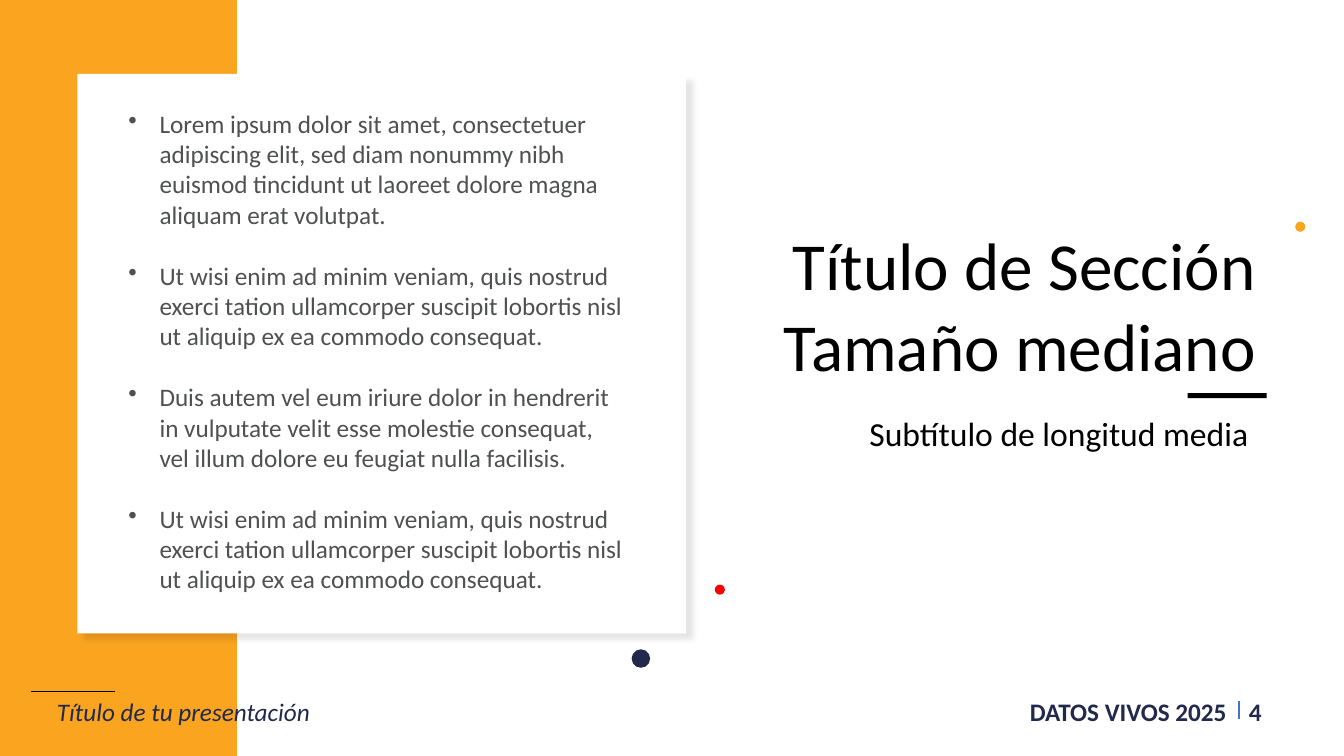
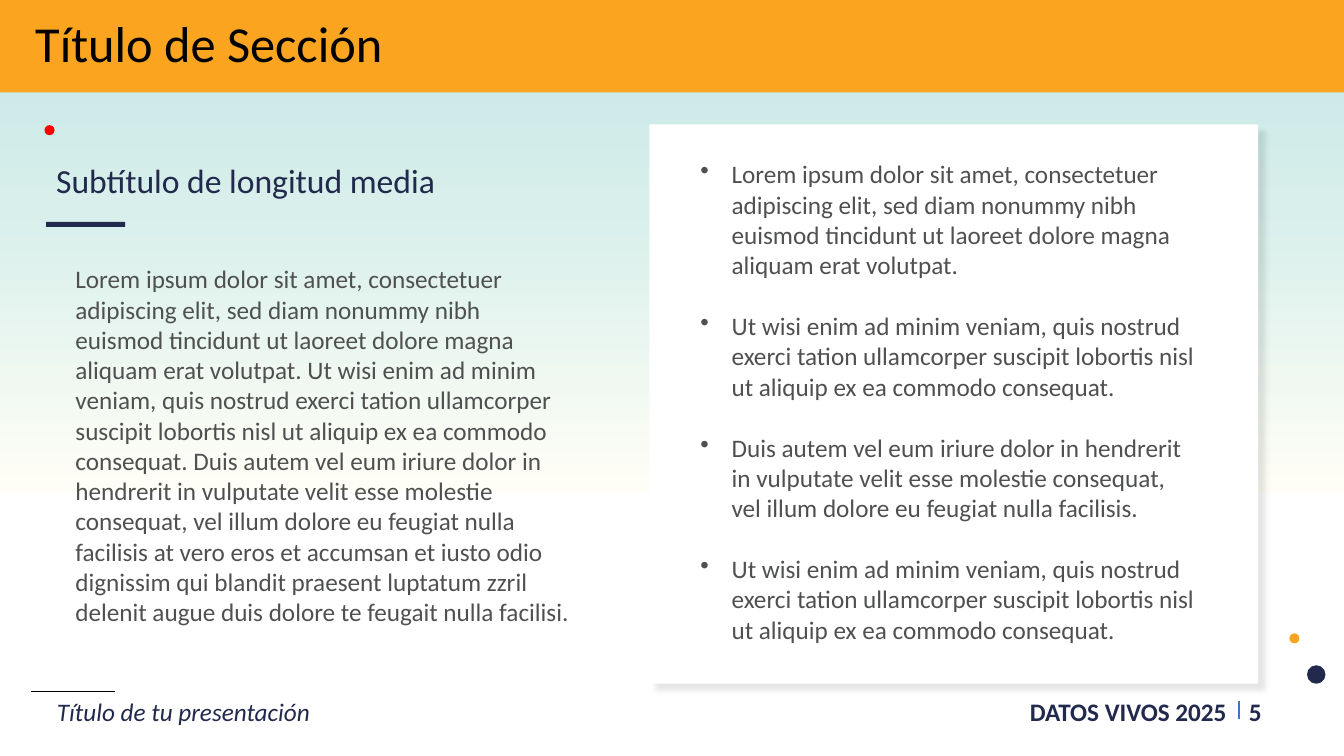
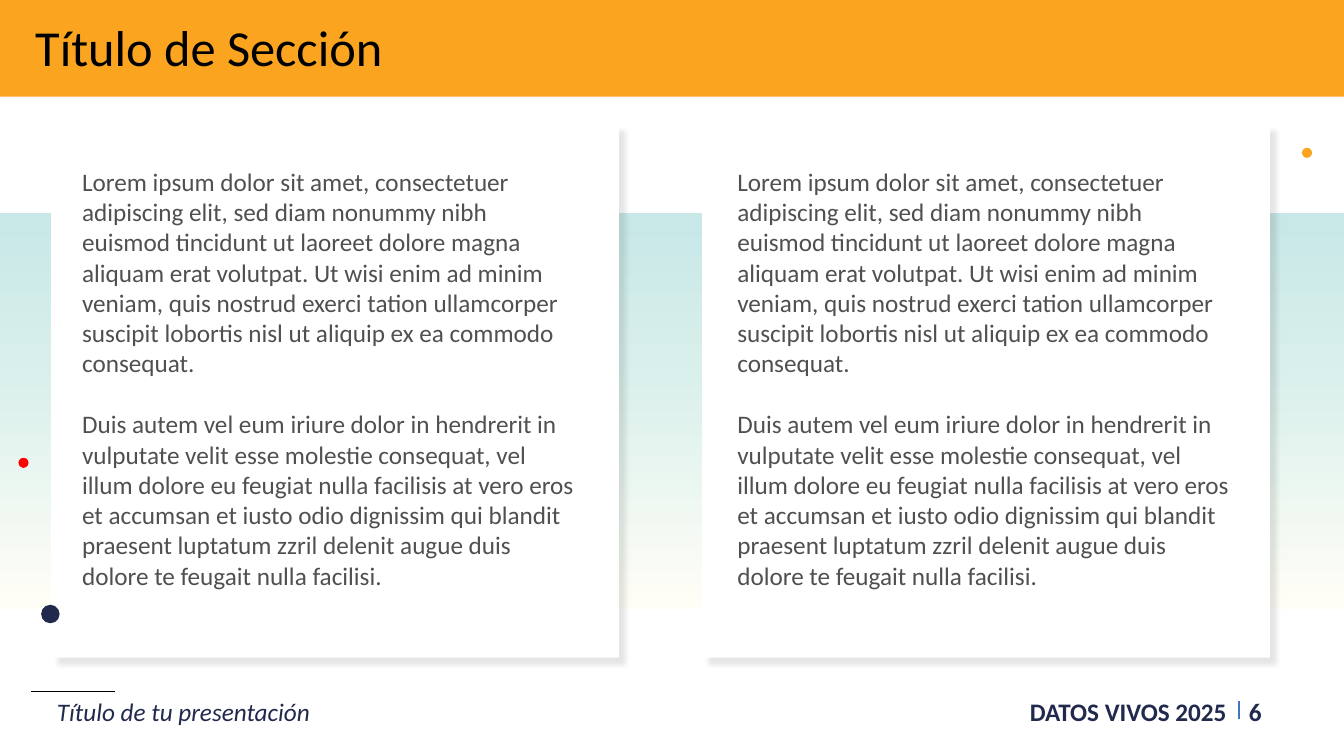
from lxml import etree
from pptx import Presentation
from pptx import util as u
from pptx.dml.color import RGBColor
from pptx.enum import shapes, text
from pptx.oxml import parse_xml
from pptx.oxml.ns import nsdecls, qn

# Shared palette
ORANGE = RGBColor(0xFA, 0xA4, 0x1F)
NAVY = RGBColor(0x21, 0x29, 0x4D)
RED = RGBColor(0xFF, 0x00, 0x00)
BLACK = RGBColor(0x00, 0x00, 0x00)
WHITE = RGBColor(0xFF, 0xFF, 0xFF)
GRAY = RGBColor(0x4F, 0x50, 0x50)
BLUE = RGBColor(0x44, 0x72, 0xC4)
SKY_STOPS = ((0, RGBColor(0xFF, 0xFE, 0xF6)),
             (62, RGBColor(0xD8, 0xEF, 0xEB)),
             (98, RGBColor(0xC8, 0xE8, 0xE7)))

# Wording used on several slides
SECTION = "Título de Sección"
SUBTITLE = "Subtítulo de longitud media"
LOREM = ("Lorem ipsum dolor sit amet, consectetuer adipiscing elit, sed diam nonummy "
         "nibh euismod tincidunt ut laoreet dolore magna aliquam erat volutpat.")
WISI = ("Ut wisi enim ad minim veniam, quis nostrud exerci tation ullamcorper "
        "suscipit lobortis nisl ut aliquip ex ea commodo consequat.")
DUIS = ("Duis autem vel eum iriure dolor in hendrerit in vulputate velit esse "
        "molestie consequat, vel illum dolore eu feugiat nulla facilisis")
VERO = (" at vero eros et accumsan et iusto odio dignissim qui blandit praesent "
        "luptatum zzril delenit augue duis dolore te feugait nulla facilisi.")
POINTS = (LOREM, WISI, DUIS + ".", WISI)

COLUMNS, ROWS = 16, 9
TEXT_WIDTH = 6.17


class Deck:
    """Style and current slide; all lengths are grid columns and rows."""

    font = "Calibri"
    body_size = 18
    paragraph_gap = 22

    def __init__(self):
        self.deck = Presentation()
        self.deck.slide_width = u.Inches(13.333)
        self.deck.slide_height = u.Inches(7.5)
        self.cell_width = self.deck.slide_width / COLUMNS
        self.cell_height = self.deck.slide_height / ROWS
        self.page = None

    def place(self, column, row, width, height):
        return (round(column * self.cell_width), round(row * self.cell_height),
                round(width * self.cell_width), round(height * self.cell_height))

    # Pages and their footer
    def add_page(self, number):
        self.page = self.deck.slides.add_slide(self.deck.slide_layouts[6])
        self.number = number

    def footer(self):
        self.text(14.75, 8.23, 0.82, 0.48, [str(self.number)], color=NAVY, bold=True)
        self.line(14.75, 8.35, 14.75, 8.56, BLUE)
        self.text(11.92, 8.23, 2.8, 0.48, ["DATOS VIVOS 2025"], color=NAVY,
                  bold=True, right=True)
        self.line(0.37, 8.23, 1.37, 8.23, BLACK)
        self.text(0.56, 8.23, 8.05, 0.48, ["Título de tu presentación"],
                  color=NAVY, italic=True)

    # Shapes
    def shape(self, column, row, width, height, color,
              kind=shapes.MSO_SHAPE.RECTANGLE):
        box = self.page.shapes.add_shape(kind, *self.place(column, row, width, height))
        box.shadow.inherit = False
        box.fill.solid()
        box.fill.fore_color.rgb = color
        box.line.fill.background()
        return box

    def dot(self, column, row, color, size=0.12):
        self.shape(column, row, size, size, color, shapes.MSO_SHAPE.OVAL)

    def rule(self, column, row, color):
        self.shape(column, row, 0.94, 0.06, color)

    def line(self, column, row, end_column, end_row, color):
        start = self.place(column, row, 0, 0)[:2]
        end = self.place(end_column, end_row, 0, 0)[:2]
        line = self.page.shapes.add_connector(shapes.MSO_CONNECTOR.STRAIGHT, *start, *end)
        line.line.color.rgb = color
        line.line.width = u.Pt(1)
        etree.SubElement(line._element.spPr, qn("a:effectLst"))

    def sky(self, row, height):
        box = self.shape(0, row, COLUMNS, height, WHITE)
        stops = "".join(f'<a:gs pos="{share * 1000}"><a:srgbClr val="{color}"/></a:gs>'
                        for share, color in SKY_STOPS)
        gradient = parse_xml(f'<a:gradFill {nsdecls("a")}><a:gsLst>{stops}</a:gsLst>'
                             '<a:lin ang="16200000" scaled="0"/></a:gradFill>')
        properties = box._element.spPr
        properties.replace(properties.find(qn("a:solidFill")), gradient)

    def card(self, column, row, width, height):
        box = self.shape(column, row, width, height, WHITE)
        effects = box._element.spPr.find(qn("a:effectLst"))
        effects.append(parse_xml(
            f'<a:outerShdw {nsdecls("a")} blurRad="{u.Pt(4)}" dist="{u.Pt(7)}" '
            'dir="2700000" algn="tl" rotWithShape="0"><a:srgbClr val="000000">'
            '<a:alpha val="9000"/></a:srgbClr></a:outerShdw>'))

    # Text
    def fill_text(self, frame, lines, color, size, bold=False, italic=False,
                  right=False, gap=0, bullets=False):
        frame.word_wrap = True
        for index, line in enumerate(lines):
            para = frame.paragraphs[0] if index == 0 else frame.add_paragraph()
            para.text = line
            para.alignment = text.PP_ALIGN.RIGHT if right else text.PP_ALIGN.LEFT
            para.space_before = u.Pt(gap if index else 0)
            para.font.name, para.font.size = self.font, u.Pt(size)
            para.font.bold, para.font.italic = bold, italic
            para.font.color.rgb = color
            if bullets:
                self.bullet(para)

    def bullet(self, para):
        properties = para._p.get_or_add_pPr()
        indent = u.Inches(0.31)
        properties.set("marL", str(indent))
        properties.set("indent", str(-indent))
        mark = parse_xml(f'<a:buChar {nsdecls("a")} char="•"/>')
        properties.find(qn("a:defRPr")).addprevious(mark)

    def text(self, column, row, width, height, lines, color=GRAY, size=body_size, **style):
        box = self.page.shapes.add_textbox(*self.place(column, row, width, height))
        self.fill_text(box.text_frame, lines, color, size, **style)

    def title_band(self, row=0):
        band = self.shape(0, row, COLUMNS, 1.15, ORANGE)
        frame = band.text_frame
        frame.margin_left, frame.margin_right = u.Inches(0.35), u.Inches(0.16)
        frame.margin_top, frame.margin_bottom = u.Inches(0.12), u.Inches(0.08)
        frame.vertical_anchor = text.MSO_ANCHOR.MIDDLE
        self.fill_text(frame, [SECTION], BLACK, 36)
        frame.paragraphs[0].line_spacing = 0.9

    def bullet_card(self, column, row):
        self.card(column, row, 7.25, 6.66)
        self.text(column + 0.49, row + 0.35, TEXT_WIDTH, 6.04, POINTS,
                  gap=self.paragraph_gap, bullets=True)

    def text_card(self, column, row, inset):
        self.card(column, row, 6.76, 6.35)
        self.text(column + inset, row + 0.44, TEXT_WIDTH, 5.66,
                  [f"{LOREM} {WISI}", DUIS + VERO], gap=self.paragraph_gap)


def section_slide(deck):
    deck.add_page(4)
    deck.shape(0, 0, 2.82, ROWS, ORANGE)
    deck.footer()
    deck.bullet_card(0.92, 0.88)
    deck.text(8.95, 2.6, 6.12, 2.06, [SECTION, "Tamaño mediano"],
              color=BLACK, size=48, right=True)
    deck.text(8.59, 4.86, 6.48, 0.6, [SUBTITLE + " "], color=BLACK, size=24, right=True)
    deck.rule(14.14, 4.68, BLACK)
    deck.dot(7.52, 7.73, NAVY, 0.22)
    deck.dot(15.42, 2.64, ORANGE)
    deck.dot(8.51, 6.96, RED)


def text_and_points_slide(deck):
    deck.add_page(5)
    deck.sky(0.4, 5.46)
    deck.title_band(-0.05)
    deck.footer()
    deck.text(0.55, 1.84, 6.48, 0.6, [SUBTITLE], color=NAVY, size=24)
    deck.rule(0.55, 2.64, NAVY)
    deck.text(0.78, 3.08, TEXT_WIDTH, 4.72, [f"{LOREM} {WISI} {DUIS}{VERO}"])
    deck.bullet_card(7.73, 1.48)
    deck.dot(15.56, 7.92, NAVY, 0.22)
    deck.dot(15.35, 7.54, ORANGE)
    deck.dot(0.53, 1.49, RED)


def two_cards_slide(deck):
    deck.add_page(6)
    deck.sky(2.53, 4.72)
    deck.title_band()
    deck.footer()
    for column, inset in ((0.61, 0.25), (8.36, 0.3)):
        deck.text_card(column, 1.48, inset)
    deck.dot(0.49, 7.2, NAVY, 0.22)
    deck.dot(15.5, 1.76, ORANGE)
    deck.dot(0.22, 5.45, RED)


def main():
    deck = Deck()
    section_slide(deck)
    text_and_points_slide(deck)
    two_cards_slide(deck)
    deck.deck.save("out.pptx")


if __name__ == "__main__":
    main()
